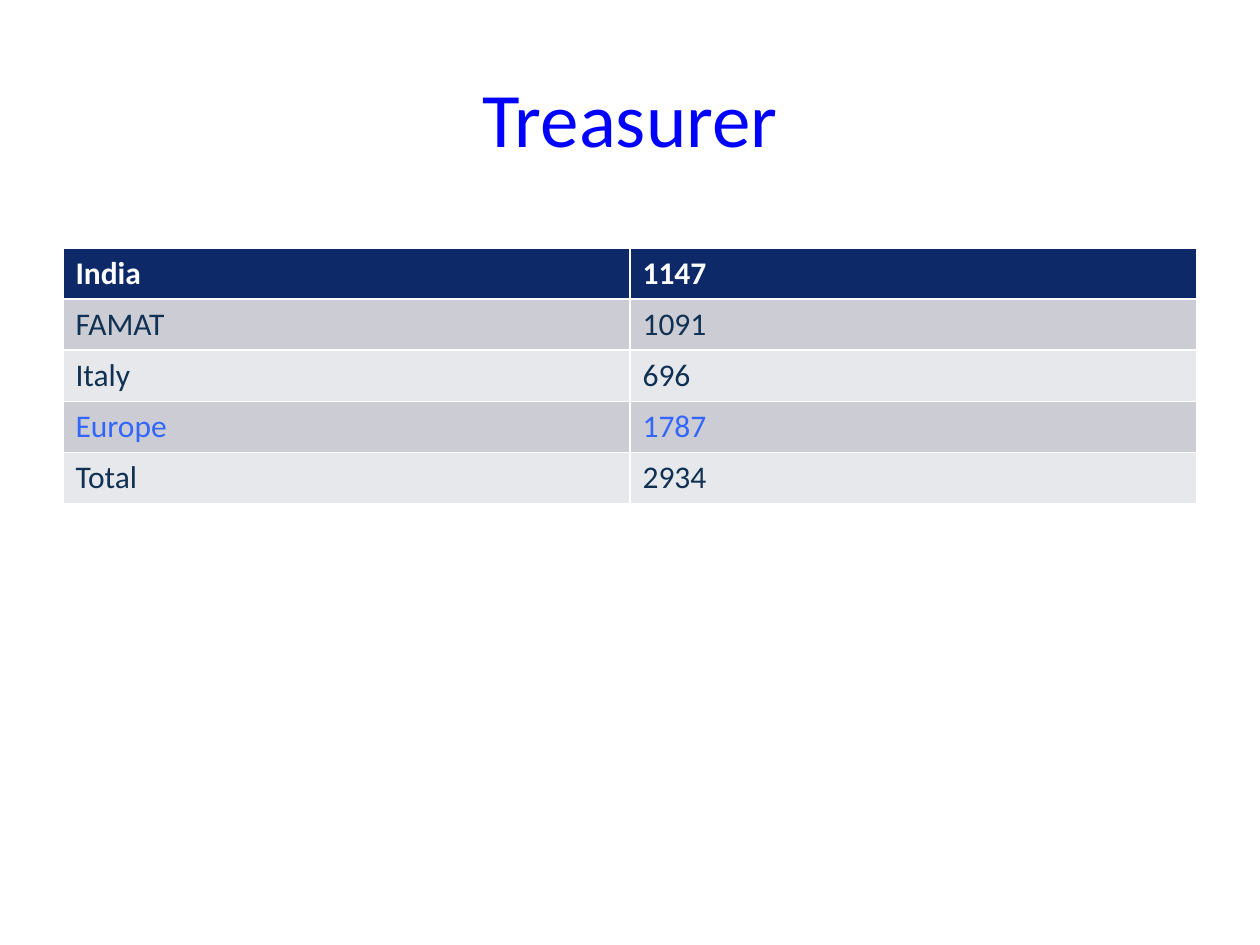
from dataclasses import dataclass

from pptx import Presentation
from pptx.dml.color import RGBColor
from pptx.enum.text import MSO_ANCHOR, PP_ALIGN
from pptx.util import Emu, Pt

CENTER, LEFT = PP_ALIGN.CENTER, PP_ALIGN.LEFT
MIDDLE = MSO_ANCHOR.MIDDLE
EMU_PER_PX = 914400 / 126
TITLE_ONLY = 5


@dataclass(frozen=True)
class Theme:
    font: str = "Calibri"
    title_size: int = 44
    table_size: int = 18
    title: str = "0000FF"
    header_fill: str = "0D2968"
    header_text: str = "FFFFFF"
    band_fills: tuple = ("CCCDD4", "E7E8EB")
    body_text: str = "103154"
    highlight: str = "3366FF"


def px(value):
    return Emu(round(value * EMU_PER_PX))


def write_text(frame, text, *, font, size, color, bold=False, align=LEFT):
    paragraph = frame.paragraphs[0]
    paragraph.alignment = align
    run = paragraph.add_run()
    run.text = text
    run.font.name = font
    run.font.size = Pt(size)
    run.font.bold = bold
    run.font.color.rgb = RGBColor.from_string(color)


class SlideBuilder:
    def __init__(self, slide, theme):
        self.slide = slide
        self.theme = theme

    def title(self, text, left, top, width, height):
        shape = self.slide.shapes.title
        shape.left, shape.top = px(left), px(top)
        shape.width, shape.height = px(width), px(height)
        shape.text_frame.vertical_anchor = MIDDLE
        write_text(shape.text_frame, text, font=self.theme.font,
                   size=self.theme.title_size, color=self.theme.title, align=CENTER)

    def table(self, rows, left, top, width, row_height, highlighted):
        theme = self.theme
        shape = self.slide.shapes.add_table(
            len(rows), len(rows[0]), px(left), px(top), px(width), px(row_height * len(rows)))
        for row_index, values in enumerate(rows):
            header = row_index == 0
            if header:
                fill, color = theme.header_fill, theme.header_text
            else:
                fill = theme.band_fills[(row_index - 1) % 2]
                color = theme.highlight if values[0] == highlighted else theme.body_text
            for column_index, value in enumerate(values):
                cell = shape.table.cell(row_index, column_index)
                cell.fill.solid()
                cell.fill.fore_color.rgb = RGBColor.from_string(fill)
                write_text(cell.text_frame, value, font=theme.font,
                           size=theme.table_size, color=color, bold=header)


def main():
    presentation = Presentation()
    presentation.slide_width, presentation.slide_height = px(1260), px(945)
    slide = presentation.slides.add_slide(presentation.slide_layouts[TITLE_ONLY])
    builder = SlideBuilder(slide, Theme())
    builder.title("Treasurer", 63, 38, 1134, 157)
    members = [
        ("India", "1147"),
        ("FAMAT", "1091"),
        ("Italy", "696"),
        ("Europe", "1787"),
        ("Total", "2934"),
    ]
    builder.table(members, 63, 248, 1134, 51, highlighted="Europe")
    presentation.save("out.pptx")


if __name__ == "__main__":
    main()
